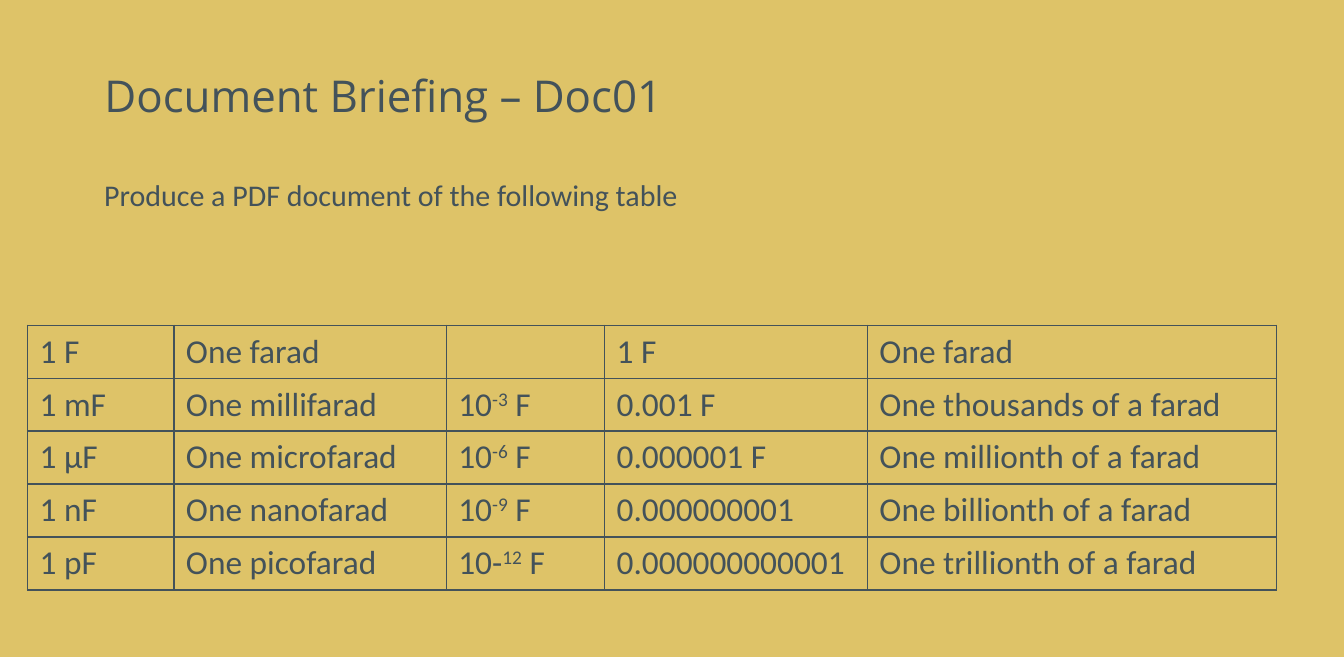
from lxml import etree
from pptx import Presentation
from pptx.dml.color import RGBColor
from pptx.enum.text import MSO_ANCHOR, MSO_AUTO_SIZE, PP_ALIGN
from pptx.oxml.ns import qn
from pptx.util import Inches, Pt

LEFT = PP_ALIGN.LEFT
MIDDLE = MSO_ANCHOR.MIDDLE
NO_FIT = MSO_AUTO_SIZE.NONE

TITLE = "Document Briefing – Doc01"
TASK = "Produce a PDF document of the following table"
UNITS = [
    ("1 F", "One farad", (), "1 F", "One farad"),
    ("1 mF", "One millifarad", ("10", "-3", " F"), "0.001 F", "One thousands of a farad"),
    ("1 μF", "One microfarad", ("10", "-6", " F"), "0.000001 F", "One millionth of a farad"),
    ("1 nF", "One nanofarad", ("10", "-9", " F"), "0.000000001", "One billionth of a farad"),
    ("1 pF", "One picofarad", ("10-", "12", " F"), "0.000000000001", "One trillionth of a farad"),
]

COLORS = {"sand": "DEC368", "slate": "43525A"}
FORMATS = {
    "title": {"name": "Open Sans", "size": Pt(26.3)},
    "task": {"name": "Calibri", "size": Pt(18)},
    "cell": {"name": "Calibri", "size": Pt(20)},
}
SLIDE_WIDTH, SLIDE_HEIGHT = Inches(11.2), Pt(394)
TEXT_LEFT = 0.77
TITLE_PLACE = (TEXT_LEFT, 0.29, 9.66, 1.06)
TASK_PLACE = (TEXT_LEFT, 1.42, 5.04, 0.4)
TABLE_LEFT, TABLE_TOP = 0.23, 2.71
COLUMN_WIDTHS = [1.22, 2.27, 1.32, 2.19, 3.41]
ROW_HEIGHT = 0.44
BORDER_WIDTH = Pt(1)


def inches(lengths):
    return [Inches(length) for length in lengths]


def write(para, parts, style):
    for position, text in enumerate(parts):
        span = para.add_run()
        span.text = text
        for name, value in FORMATS[style].items():
            setattr(span.font, name, value)
        span.font.color.rgb = RGBColor.from_string(COLORS["slate"])
        if position == 1:
            span._r.get_or_add_rPr().set("baseline", "30000")


def draw_borders(cell):
    properties = cell._tc.get_or_add_tcPr()
    for index, side in enumerate(("a:lnL", "a:lnR", "a:lnT", "a:lnB")):
        line = etree.Element(qn(side), w=str(BORDER_WIDTH))
        fill = etree.SubElement(line, qn("a:solidFill"))
        etree.SubElement(fill, qn("a:srgbClr"), val=COLORS["slate"])
        properties.insert(index, line)


def add_title(page):
    title = page.shapes.title
    title.left, title.top, title.width, title.height = inches(TITLE_PLACE)
    frame = title.text_frame
    for name, value in {"vertical_anchor": MIDDLE, "auto_size": NO_FIT, "word_wrap": True}.items():
        setattr(frame, name, value)
    para = frame.paragraphs[0]
    para.alignment = LEFT
    para.line_spacing = 0.9
    write(para, [TITLE], "title")


def add_task(page):
    box = page.shapes.add_textbox(*inches(TASK_PLACE))
    box.text_frame.word_wrap = False
    write(box.text_frame.paragraphs[0], [TASK], "task")


def add_units(page):
    place = (TABLE_LEFT, TABLE_TOP, sum(COLUMN_WIDTHS), ROW_HEIGHT * len(UNITS))
    table = page.shapes.add_table(len(UNITS), len(COLUMN_WIDTHS), *inches(place)).table
    table.first_row = table.horz_banding = False
    for column, width in zip(table.columns, COLUMN_WIDTHS):
        column.width = Inches(width)
    for row, unit in zip(table.rows, UNITS):
        row.height = Inches(ROW_HEIGHT)
        for cell, content in zip(row.cells, unit):
            parts = [content] if isinstance(content, str) else content
            write(cell.text_frame.paragraphs[0], parts, "cell")
            cell.fill.background()
            draw_borders(cell)


def main():
    deck = Presentation()
    deck.slide_width, deck.slide_height = SLIDE_WIDTH, SLIDE_HEIGHT
    page = deck.slides.add_slide(deck.slide_layouts.get_by_name("Title Only"))
    page.background.fill.solid()
    page.background.fill.fore_color.rgb = RGBColor.from_string(COLORS["sand"])
    add_title(page)
    add_units(page)
    add_task(page)
    deck.save("out.pptx")


if __name__ == "__main__":
    main()
